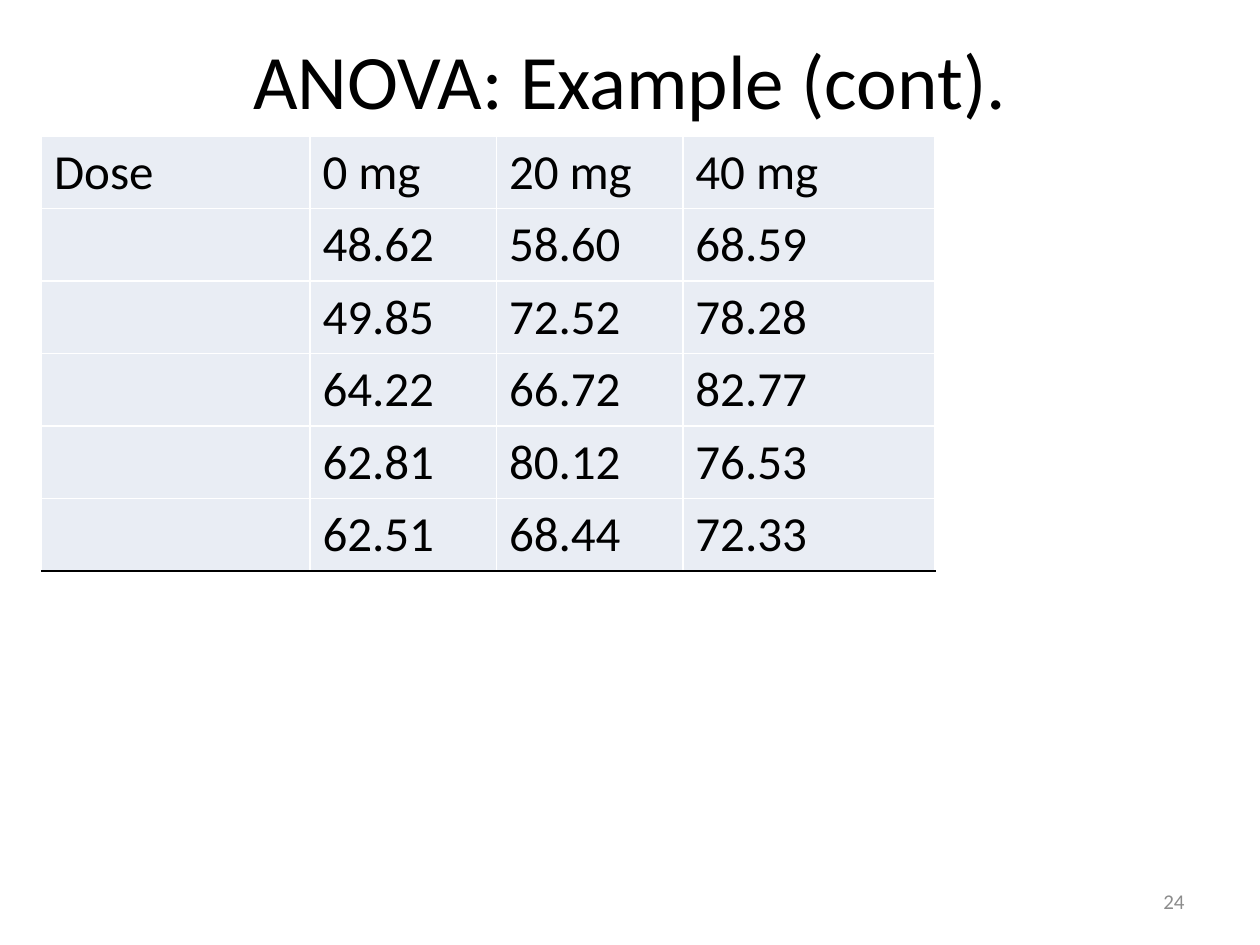
from dataclasses import dataclass

import pptx
import pptx.dml.color
import pptx.enum.text
import pptx.oxml
import pptx.oxml.ns
import pptx.util
from pptx.util import Inches

ALIGN = pptx.enum.text.PP_ALIGN
MIDDLE = pptx.enum.text.MSO_ANCHOR.MIDDLE


@dataclass(frozen=True)
class Theme:
    font: str = "Calibri"
    ink: str = "000000"
    muted: str = "8C8C8C"
    cell: str = "E9EDF4"
    grid: str = "FFFFFF"
    title_size: int = 44
    table_size: int = 28
    number_size: int = 12
    border: int = 1


@dataclass(frozen=True)
class Box:
    left: float
    top: float
    width: float
    height: float

    def lengths(self) -> tuple:
        return tuple(Inches(v) for v in (self.left, self.top, self.width, self.height))


@dataclass(frozen=True)
class DoseGroup:
    label: str
    responses: tuple[str, ...]
    width: float


THEME = Theme()
TITLE_BOX = Box(0.5, 0, 9, 1.25)
NUMBER_BOX = Box(7.17, 6.95, 2.33, 0.4)
TABLE_LEFT, TABLE_TOP, ROW_HEIGHT = 0.33, 1.08, 0.57
DOSE_GROUPS = (
    DoseGroup("Dose", ("",) * 5, 2.13),
    DoseGroup("0 mg", ("48.62", "49.85", "64.22", "62.81", "62.51"), 1.48),
    DoseGroup("20 mg", ("58.60", "72.52", "66.72", "80.12", "68.44"), 1.48),
    DoseGroup("40 mg", ("68.59", "78.28", "82.77", "76.53", "72.33"), 2),
)


def write(frame, text: str, size: int, color: str, align=ALIGN.LEFT) -> None:
    paragraph = frame.paragraphs[0]
    paragraph.alignment = align
    run = paragraph.add_run()
    run.text = text
    run.font.name = THEME.font
    run.font.size = pptx.util.Pt(size)
    run.font.color.rgb = pptx.dml.color.RGBColor.from_string(color)


def set_borders(cell, bottom: str) -> None:
    """Rule all four sides; call before filling, as the schema puts lines first."""
    properties = cell._tc.get_or_add_tcPr()
    width = pptx.util.Pt(THEME.border)
    for side in "LRTB":
        color = bottom if side == "B" else THEME.grid
        properties.append(pptx.oxml.parse_xml(
            f'<a:ln{side} {pptx.oxml.ns.nsdecls("a")} w="{width}">'
            f'<a:solidFill><a:srgbClr val="{color}"/></a:solidFill></a:ln{side}>'
        ))


def add_dose_table(slide, groups: tuple[DoseGroup, ...]) -> None:
    row_count = 1 + len(groups[0].responses)
    box = Box(TABLE_LEFT, TABLE_TOP, sum(g.width for g in groups), row_count * ROW_HEIGHT)
    table = slide.shapes.add_table(row_count, len(groups), *box.lengths()).table
    table.first_row = table.horz_banding = False
    for column, group in enumerate(groups):
        table.columns[column].width = Inches(group.width)
        for row, text in enumerate((group.label, *group.responses)):
            cell = table.cell(row, column)
            set_borders(cell, THEME.ink if row == row_count - 1 else THEME.grid)
            cell.fill.solid()
            cell.fill.fore_color.rgb = pptx.dml.color.RGBColor.from_string(THEME.cell)
            if text:
                write(cell.text_frame, text, THEME.table_size, THEME.ink)


def add_title(slide, text: str) -> None:
    title = slide.shapes.title
    title.left, title.top, title.width, title.height = TITLE_BOX.lengths()
    title.text_frame.vertical_anchor = MIDDLE
    write(title.text_frame, text, THEME.title_size, THEME.ink, ALIGN.CENTER)


def add_slide_number(slide, number: str) -> None:
    frame = slide.shapes.add_textbox(*NUMBER_BOX.lengths()).text_frame
    frame.word_wrap = True
    frame.vertical_anchor = MIDDLE
    write(frame, number, THEME.number_size, THEME.muted, ALIGN.RIGHT)


def main() -> None:
    deck = pptx.Presentation()
    deck.slide_width, deck.slide_height = Inches(10), Inches(7.5)
    slide = deck.slides.add_slide(deck.slide_layouts.get_by_name("Title Only"))
    add_title(slide, "ANOVA: Example (cont).")
    add_dose_table(slide, DOSE_GROUPS)
    add_slide_number(slide, "24")
    deck.save("out.pptx")


if __name__ == "__main__":
    main()
